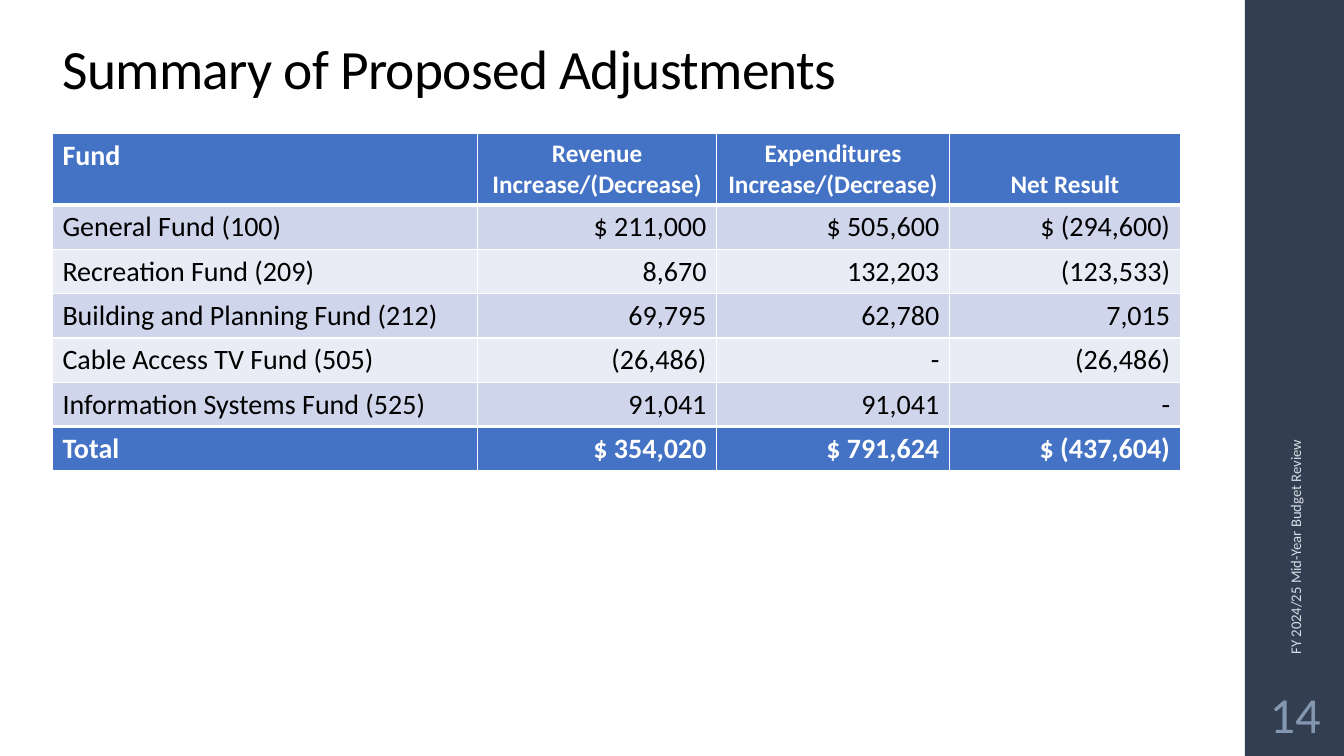
from lxml import etree
from pptx import Presentation
from pptx.dml.color import RGBColor
from pptx.enum import shapes, text
from pptx.oxml import ns
from pptx.util import Pt

FONT = "Calibri"
COLORS = {
    "white": "FFFFFF",
    "black": "000000",
    "sidebar": "333F50",
    "footer": "D6DCE5",
    "number": "8497B0",
    "accent": "4472C4",
    "band_dark": "CFD5EA",
    "band_light": "E9EBF5",
}
LEFT, CENTER, RIGHT = text.PP_ALIGN.LEFT, text.PP_ALIGN.CENTER, text.PP_ALIGN.RIGHT
TOP, MIDDLE, BOTTOM = text.MSO_ANCHOR.TOP, text.MSO_ANCHOR.MIDDLE, text.MSO_ANCHOR.BOTTOM

COLUMN_WIDTHS = [303.84, 170.64, 166.32, 164.88]
HEADER_HEIGHT, ROW_HEIGHT = 51, 31.68
FUNDS = [
    ["Fund", "Revenue\nIncrease/(Decrease)", "Expenditures\nIncrease/(Decrease)", "Net Result"],
    ["General Fund (100)", "$ 211,000", "$ 505,600", "$ (294,600)"],
    ["Recreation Fund (209)", "8,670", "132,203", "(123,533)"],
    ["Building and Planning Fund (212)", "69,795", "62,780", "7,015"],
    ["Cable Access TV Fund (505)", "(26,486)", "-", "(26,486)"],
    ["Information Systems Fund (525)", "91,041", "91,041", "-"],
    ["Total", "$ 354,020", "$ 791,624", "$ (437,604)"],
]


def rgb(name):
    return RGBColor.from_string(COLORS[name])


def write(frame, content, size, color, align=LEFT, bold=False):
    frame.text = content
    for para in frame.paragraphs:
        para.alignment = align
        for span in para.runs:
            span.font.name = FONT
            span.font.size = Pt(size)
            span.font.bold = bold
            span.font.color.rgb = rgb(color)


def add_title(page, left, top, width, height):
    title = page.shapes.title
    title.left, title.top, title.width, title.height = map(Pt, (left, top, width, height))
    frame = title.text_frame
    write(frame, "Summary of Proposed Adjustments", 39.6, "black")
    frame.auto_size = text.MSO_AUTO_SIZE.NONE
    frame.vertical_anchor = BOTTOM
    para = frame.paragraphs[0]
    para.line_spacing = 0.9
    para.runs[0].font._element.set("spc", "-50")


def add_label(page, left, top, width, height, content, size, color, align=LEFT):
    box = page.shapes.add_textbox(Pt(left), Pt(top), Pt(width), Pt(height))
    frame = box.text_frame
    frame.word_wrap = True
    frame.vertical_anchor = MIDDLE
    write(frame, content, size, color, align)
    return box


def add_sidebar(page, left, top, width, height):
    bar = page.shapes.add_shape(
        shapes.MSO_SHAPE.RECTANGLE, Pt(left), Pt(top), Pt(width), Pt(height))
    bar.shadow.inherit = False
    bar.fill.solid()
    bar.fill.fore_color.rgb = rgb("sidebar")
    bar.line.fill.background()

    length, thickness = 282.24, 28.8
    footer = add_label(
        page, left + (width - length) / 2, top + 318.96, length, thickness,
        "FY 2024/25 Mid-Year Budget Review", 10.5, "footer")
    footer.rotation = 270

    number = add_label(page, left, top + 486, width, 46.8, "14", 36, "number", CENTER)
    frame = number.text_frame
    frame.margin_left = frame.margin_right = Pt(3.6)
    frame.margin_top = frame.margin_bottom = Pt(3.6)


def set_borders(cell, top, bottom):
    properties = cell._tc.get_or_add_tcPr()
    widths = {"lnL": 1, "lnR": 1, "lnT": top, "lnB": bottom}
    for index, (side, width) in enumerate(widths.items()):
        line = etree.Element(ns.qn("a:" + side), w=str(Pt(width)))
        fill = etree.SubElement(line, ns.qn("a:solidFill"))
        etree.SubElement(fill, ns.qn("a:srgbClr"), val=COLORS["white"])
        properties.insert(index, line)


def add_fund_table(page, left, top):
    last = len(FUNDS) - 1
    heights = [HEADER_HEIGHT] + [ROW_HEIGHT] * last
    table = page.shapes.add_table(
        len(FUNDS), len(COLUMN_WIDTHS), Pt(left), Pt(top),
        Pt(sum(COLUMN_WIDTHS)), Pt(sum(heights))).table
    table.last_row = True
    for column, width in zip(table.columns, COLUMN_WIDTHS):
        column.width = Pt(width)
    for r, (row, height, values) in enumerate(zip(table.rows, heights, FUNDS)):
        row.height = Pt(height)
        strong = r in (0, last)
        band = "accent" if strong else "band_dark" if r % 2 else "band_light"
        for c, (cell, value) in enumerate(zip(row.cells, values)):
            align = LEFT if c == 0 else CENTER if r == 0 else RIGHT
            size = 18 if r == 0 and c else 20
            write(cell.text_frame, value, size, "white" if strong else "black", align, strong)
            cell.vertical_anchor = BOTTOM if value == "Net Result" else TOP
            set_borders(cell, 3 if r in (1, last) else 1, 3 if r in (0, last - 1) else 1)
            cell.fill.solid()
            cell.fill.fore_color.rgb = rgb(band)


def main():
    deck = Presentation()
    deck.slide_width, deck.slide_height = Pt(960), Pt(540)
    page = deck.slides.add_slide(deck.slide_layouts.get_by_name("Title Only"))
    add_sidebar(page, 889.2, 0, 72, 540)
    add_title(page, 37.44, 29.52, 763.2, 46.8)
    add_fund_table(page, 37.44, 95.4)
    deck.save("out.pptx")


if __name__ == "__main__":
    main()
